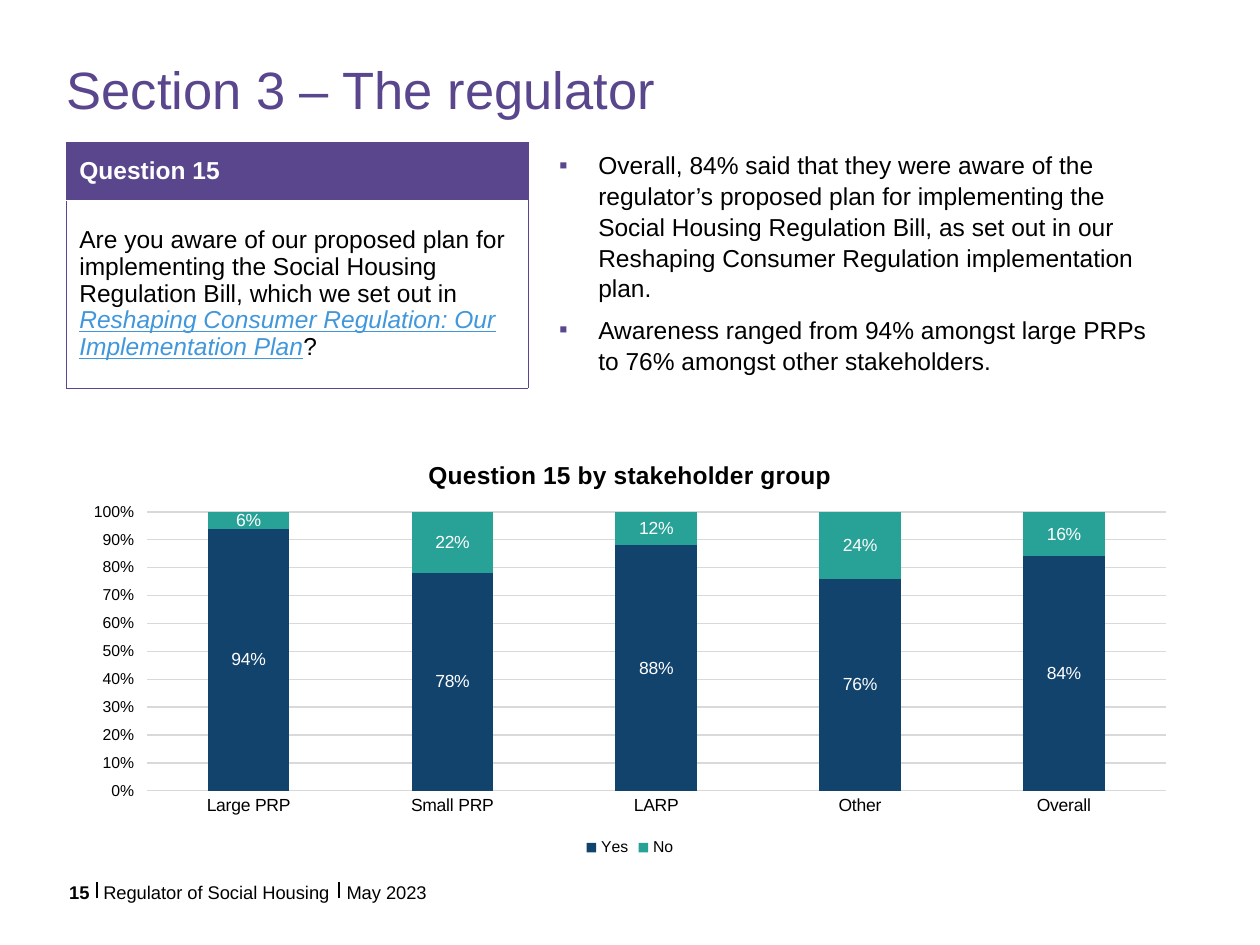
from lxml.etree import SubElement
from pptx import Presentation
from pptx.chart.data import CategoryChartData
from pptx.dml.color import RGBColor
from pptx.enum.chart import XL_CHART_TYPE as Kind, XL_LEGEND_POSITION as Spot, XL_TICK_MARK as Tick
from pptx.enum.shapes import MSO_CONNECTOR as Conn
from pptx.enum.text import MSO_ANCHOR as Anchor, MSO_AUTO_SIZE as Auto, PP_ALIGN as Align
from pptx.oxml.ns import qn
from pptx.util import Inches, Pt

HUES = {"purple": "59468D", "black": "000000", "white": "FFFFFF", "link": "4097DB",
        "grid": "D9D9D9", "navy": "12436D", "teal": "28A197"}
TITLE = "Section 3 – The regulator"
HEAD = "Question 15"
ASK = [
    ("Are you aware of our proposed plan for implementing the Social Housing "
     "Regulation Bill, which we set out in ", {}),
    ("Reshaping Consumer Regulation: Our Implementation Plan",
     {"hue": "link", "italic": True, "underline": True}),
    ("?", {}),
]
POINTS = [
    "Overall, 84% said that they were aware of the regulator’s proposed plan for "
    "implementing the Social Housing Regulation Bill, as set out in our Reshaping "
    "Consumer Regulation implementation plan.",
    "Awareness ranged from 94% amongst large PRPs to 76% amongst other stakeholders.",
]
CHART = "Question 15 by stakeholder group"
GROUPS = ["Large PRP", "Small PRP", "LARP", "Other", "Overall"]
SERIES = [("Yes", "navy", [0.94, 0.78, 0.88, 0.76, 0.84]),
          ("No", "teal", [0.06, 0.22, 0.12, 0.24, 0.16])]
PLOT = {"x": 0.067, "y": 0.171, "w": 0.913, "h": 0.661}

LEFT, TOP, FOOT = 0.53, 1.13, 6.99
ROWS = [0.46, 1.49]
# text, left, width, format, alignment
FOOTER = [("15", LEFT, 0.2, {"bold": True}, Align.CENTER),
          ("Regulator of Social Housing", 0.82, 1.83, {}, Align.LEFT),
          ("May 2023", 2.75, 2.35, {}, Align.LEFT)]
BARS = [0.77, 2.69]


def rgb(hue):
    return RGBColor.from_string(HUES[hue])


def style(font, size, hue="black", **form):
    font.name, font.size = "Arial", Pt(size)
    font.color.rgb = rgb(hue)
    for key, value in form.items():
        setattr(font, key, value)


def write(para, text, size, **form):
    run = para.add_run()
    run.text = text
    style(run.font, size, **form)


def bare(frame):
    """Remove the insets and anchor the text at the top."""
    for side in ("left", "top", "right", "bottom"):
        setattr(frame, f"margin_{side}", 0)
    frame.vertical_anchor = Anchor.TOP
    frame.auto_size = Auto.NONE


def box(slide, *at):
    frame = slide.shapes.add_textbox(*map(Inches, at)).text_frame
    frame.word_wrap = True
    return frame


def edge(cell, sides):
    props = cell._tc.get_or_add_tcPr()
    for spot, side in enumerate(sides):
        line = SubElement(props, qn(f"a:ln{side}"), w=str(Pt(0.5)))
        fill = SubElement(line, qn("a:solidFill"))
        SubElement(fill, qn("a:srgbClr"), val=HUES["purple"])
        props.insert(spot, line)


def add_title(slide):
    title = slide.shapes.title
    title.left, title.top, title.width, title.height = map(Inches, (LEFT, 0.51, 8.87, 0.79))
    bare(title.text_frame)
    para = title.text_frame.paragraphs[0]
    para.alignment, para.line_spacing = Align.LEFT, 0.9
    write(para, TITLE, 30, hue="purple")


def add_footer(slide):
    for x in BARS:
        line = slide.shapes.add_connector(
            Conn.STRAIGHT, *map(Inches, (x, 7.13, x, 7)))
        line.line.color.rgb, line.line.width = rgb("black"), Pt(0.75)
        SubElement(line._element.spPr, qn("a:effectLst"))
    for text, x, wide, form, align in FOOTER:
        frame = box(slide, x, FOOT, wide, 0.12)
        bare(frame)
        frame.paragraphs[0].alignment = align
        write(frame.paragraphs[0], text, 10.5, **form)


def add_question(slide):
    table = slide.shapes.add_table(
        2, 1, *map(Inches, (LEFT, TOP, 3.66, sum(ROWS)))).table
    parts = [([(HEAD, {"hue": "white", "bold": True})], "purple", "LRT"),
             (ASK, "white", "LRTB")]
    for row, (runs, fill, sides) in enumerate(parts):
        table.rows[row].height = Inches(ROWS[row])
        cell = table.cell(row, 0)
        cell.vertical_anchor = Anchor.MIDDLE
        cell.fill.solid()
        cell.fill.fore_color.rgb = rgb(fill)
        edge(cell, sides)
        para = cell.text_frame.paragraphs[0]
        para.line_spacing = 0.97
        for text, form in runs:
            write(para, text, 14, **{"bold": False, **form})


def add_points(slide):
    frame = box(slide, 4.34, TOP, 5.06, 1.83)
    for spot, text in enumerate(POINTS):
        para = frame.add_paragraph() if spot else frame.paragraphs[0]
        para.space_after, para.line_spacing = Pt(6), 1.05
        props = para._p.get_or_add_pPr()
        props.set("marL", str(Inches(0.31)))
        props.set("indent", str(-Inches(0.31)))
        tint = SubElement(props, qn("a:buClr"))
        SubElement(tint, qn("a:srgbClr"), val=HUES["purple"])
        SubElement(props, qn("a:buFont"), typeface="Arial")
        SubElement(props, qn("a:buChar"), char="▪")
        write(para, text, 14)


def place_plot(chart):
    area = chart._chartSpace.chart.plotArea
    for old in area.findall(qn("c:layout")):
        area.remove(old)
    layout = SubElement(area, qn("c:layout"))
    area.insert(0, layout)
    manual = SubElement(layout, qn("c:manualLayout"))
    rules = {"layoutTarget": "inner", "xMode": "edge", "yMode": "edge", **PLOT}
    for key, value in rules.items():
        SubElement(manual, qn(f"c:{key}"), val=str(value))


def add_chart(slide):
    data = CategoryChartData(number_format="0%")
    data.categories = GROUPS
    for name, _, values in SERIES:
        data.add_series(name, values)
    chart = slide.shapes.add_chart(
        Kind.COLUMN_STACKED_100, *map(Inches, (0.57, 3.49, 8.86, 3.35)), data).chart
    style(chart.font, 10)
    chart.has_title = True
    write(chart.chart_title.text_frame.paragraphs[0], CHART, 14, bold=True)
    chart.chart_title.include_in_layout = False
    chart.has_legend = True
    chart.legend.position, chart.legend.include_in_layout = Spot.BOTTOM, False
    style(chart.legend.font, 9)

    plot = chart.plots[0]
    plot.gap_width, plot.overlap, plot.vary_by_categories = 150, 100, False
    for bars, (_, hue, _) in zip(plot.series, SERIES):
        bars.format.fill.solid()
        bars.format.fill.fore_color.rgb = rgb(hue)
        tags = bars.data_labels
        tags.show_value, tags.number_format = True, "0%"
        tags.number_format_is_linked = False
        style(tags.font, 10, "white")

    base, scale = chart.category_axis, chart.value_axis
    base.major_tick_mark = Tick.NONE
    style(base.tick_labels.font, 10)
    style(scale.tick_labels.font, 9)
    scale.tick_labels.number_format = "0%"
    scale.tick_labels.number_format_is_linked = False
    scale.minimum_scale, scale.maximum_scale, scale.major_unit = 0, 1, 0.1
    scale.major_tick_mark = Tick.OUTSIDE
    scale.format.line.fill.background()
    for line in (base.format.line, scale.major_gridlines.format.line):
        line.color.rgb, line.width = rgb("grid"), Pt(0.75)
    place_plot(chart)


def main():
    deck = Presentation()
    deck.slide_width, deck.slide_height = Inches(10), Inches(7.5)
    slide = deck.slides.add_slide(deck.slide_layouts[5])
    for add in (add_title, add_footer, add_question, add_points, add_chart):
        add(slide)
    deck.save("out.pptx")


if __name__ == "__main__":
    main()
